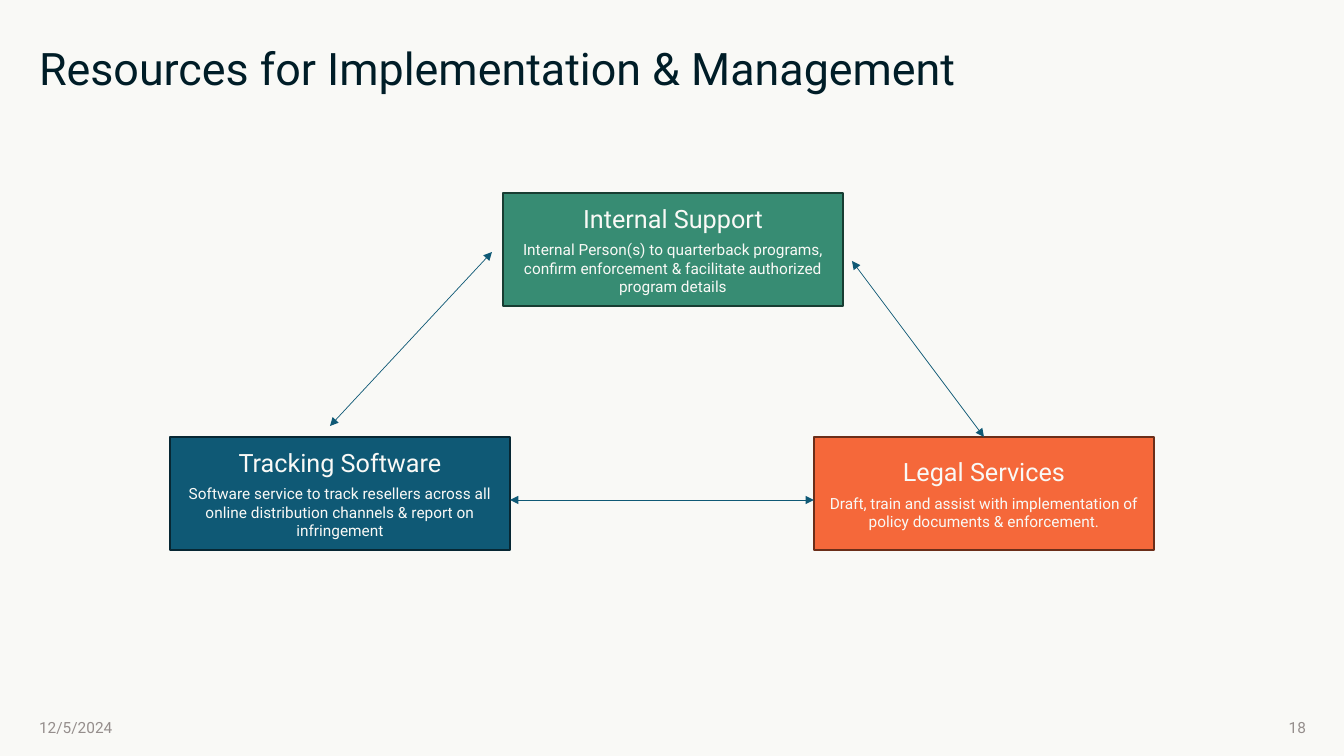
from lxml import etree
from pptx import Presentation
from pptx.dml.color import RGBColor
from pptx.enum.shapes import MSO_CONNECTOR as Connector, MSO_SHAPE as Shape
from pptx.enum.text import MSO_ANCHOR as Anchor, MSO_AUTO_SIZE as AutoSize, PP_ALIGN as Align
from pptx.oxml.ns import qn
from pptx.util import Pt

FONT = "Roboto"
PAPER, INK, GREY, BLUE = "F9F9F6", "001D27", "958E8C", "0F5975"
SCALE = 914400 / 100.8
BOX_WIDTH, BOX_HEIGHT = 340, 113

TITLE = "Resources for Implementation & Management"
# text, left, width, alignment
FOOTERS = [
    ("12/5/2024", 39, 131, Align.LEFT),
    ("18", 1167, 139, Align.RIGHT),
]
# heading, detail, left, top, fill, outline
RESOURCES = [
    ("Legal Services",
     "Draft, train and assist with implementation of policy documents & enforcement.",
     814, 437, "F5683A", "6B2E19"),
    ("Tracking Software",
     "Software service to track resellers across all online distribution channels "
     "& report on infringement",
     170, 437, BLUE, "072733"),
    ("Internal Support",
     "Internal Person(s) to quarterback programs, confirm enforcement & facilitate "
     "authorized program details",
     503, 193, "378C73", "183D32"),
]
# begin x, begin y, end x, end y, resource whose top the arrow begins at
ARROWS = [
    (492, 252, 330, 426, None),
    (814, 500, 510, 500, None),
    (984, 437, 852, 261, "Legal Services"),
]


def px(*lengths):
    return [round(length * SCALE) for length in lengths]


def color(value):
    return RGBColor.from_string(value)


def style(para, size, value, align):
    para.alignment = align
    for span in para.runs:
        span.font.name = FONT
        span.font.size = Pt(size)
        span.font.color.rgb = color(value)


def flush_frame(shape, anchor):
    """Wrap the text and remove the side insets, so it starts at the shape's edge."""
    frame = shape.text_frame
    frame.word_wrap = True
    frame.auto_size = AutoSize.NONE
    frame.vertical_anchor = anchor
    frame.margin_left = frame.margin_right = 0
    return frame


def add_title(slide):
    title = slide.shapes.title
    title.left, title.top, title.width, title.height = px(39, 33, 1267, 67)
    frame = flush_frame(title, Anchor.BOTTOM)
    frame.text = TITLE
    para = frame.paragraphs[0]
    para.line_spacing = 0.9
    style(para, 32, INK, Align.LEFT)


def add_footer(slide, text, left, width, align):
    box = slide.shapes.add_textbox(*px(left, 713, width, 29))
    frame = flush_frame(box, Anchor.MIDDLE)
    frame.text = text
    style(frame.paragraphs[0], 11, GREY, align)


def add_resource(slide, heading, detail, left, top, fill, outline):
    box = slide.shapes.add_shape(Shape.RECTANGLE, *px(left, top, BOX_WIDTH, BOX_HEIGHT))
    box.shadow.inherit = False
    box.fill.solid()
    box.fill.fore_color.rgb = color(fill)
    box.line.color.rgb = color(outline)
    box.line.width = Pt(1)
    frame = box.text_frame
    frame.word_wrap = True
    frame.vertical_anchor = Anchor.MIDDLE
    frame.text = f"{heading}\n{detail}"
    for para, size in zip(frame.paragraphs, (18, 11)):
        style(para, size, PAPER, Align.CENTER)
    frame.paragraphs[0].space_after = Pt(5)
    return box


def add_arrow(slide, points, start_box):
    arrow = slide.shapes.add_connector(Connector.STRAIGHT, *px(*points))
    if start_box is not None:
        arrow.begin_connect(start_box, 0)
    arrow.line.color.rgb = color(BLUE)
    arrow.line.width = Pt(0.5)
    outline = arrow.line._get_or_add_ln()
    for end in ("a:headEnd", "a:tailEnd"):
        etree.SubElement(outline, qn(end), type="triangle")
    etree.SubElement(arrow._element.spPr, qn("a:effectLst"))


def main():
    deck = Presentation()
    deck.slide_width, deck.slide_height = px(1344, 756)
    slide = deck.slides.add_slide(deck.slide_layouts[5])
    slide.background.fill.solid()
    slide.background.fill.fore_color.rgb = color(PAPER)

    add_title(slide)
    for footer in FOOTERS:
        add_footer(slide, *footer)
    boxes = {resource[0]: add_resource(slide, *resource) for resource in RESOURCES}
    for *points, start in ARROWS:
        add_arrow(slide, points, boxes.get(start))
    deck.save("out.pptx")


if __name__ == "__main__":
    main()
